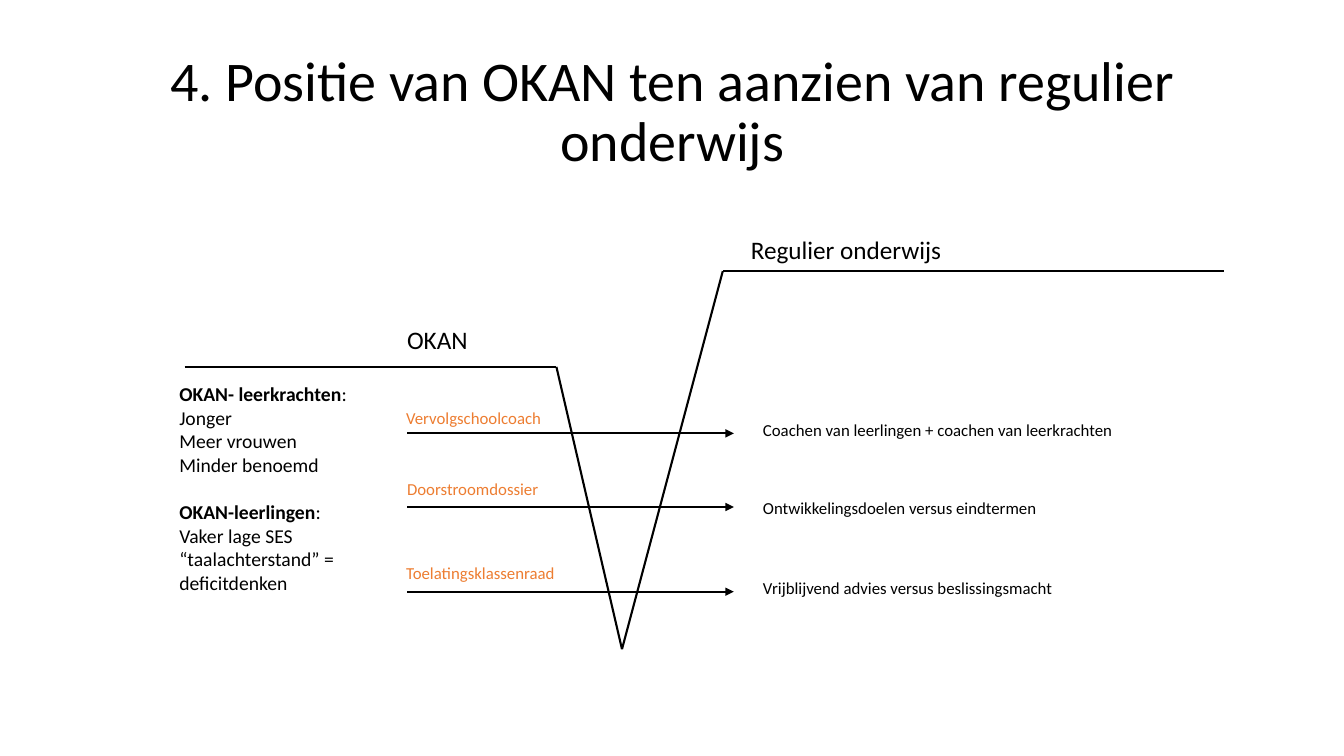
import pptx
import pptx.util
import pptx.dml.color
import pptx.enum.text
import pptx.enum.shapes
import pptx.oxml.ns
import lxml.etree

Pt = pptx.util.Pt
BLACK = pptx.dml.color.RGBColor(0, 0, 0)
ORANGE = pptx.dml.color.RGBColor(0xED, 0x7D, 0x31)

deck = pptx.Presentation()
deck.slide_width = pptx.util.Inches(13.33)
deck.slide_height = pptx.util.Inches(7.5)
col = deck.slide_width / 100
row = deck.slide_height / 100
slide = deck.slides.add_slide(deck.slide_layouts[6])


def write(left, top, wide, high, paras, size, color=BLACK):
    box = slide.shapes.add_textbox(
        round(left * col), round(top * row), round(wide * col), round(high * row))
    frame = box.text_frame
    frame.word_wrap = True
    for nr, runs in enumerate(paras):
        para = frame.add_paragraph() if nr else frame.paragraphs[0]
        for text, bold in runs:
            run = para.add_run()
            run.text = text
            run.font.name = "Calibri"
            run.font.size = Pt(size)
            run.font.bold = bold
            run.font.color.rgb = color
    return frame


def draw(start, end, arrow=False):
    line = slide.shapes.add_connector(
        pptx.enum.shapes.MSO_CONNECTOR.STRAIGHT,
        round(start[0] * col), round(start[1] * row),
        round(end[0] * col), round(end[1] * row))
    line.line.color.rgb = BLACK
    line.line.width = Pt(1.5)
    props = line._element.spPr
    if arrow:
        lxml.etree.SubElement(
            props.get_or_add_ln(), pptx.oxml.ns.qn("a:tailEnd"), type="triangle")
    lxml.etree.SubElement(props, pptx.oxml.ns.qn("a:effectLst"))


title = write(6.9, 5.33, 86.25, 19.33,
              [[("4. Positie van OKAN ten aanzien van regulier onderwijs", False)]], 40)
title.vertical_anchor = pptx.enum.text.MSO_ANCHOR.MIDDLE
title.paragraphs[0].alignment = pptx.enum.text.PP_ALIGN.CENTER
title.paragraphs[0].line_spacing = 0.9

cliff = [(13.73, 48.53), (41.4, 48.53), (46.28, 85.87), (53.78, 35.87), (91.05, 35.87)]
for start, end in zip(cliff, cliff[1:]):
    draw(start, end)

write(29.55, 42.27, 10.5, 5.33, [[("OKAN", False)]], 18)
write(55.13, 30.4, 17.03, 5.33, [[("Regulier onderwijs", False)]], 18)

groups = [
    ("OKAN- leerkrachten", ["Jonger", "Meer vrouwen", "Minder benoemd"]),
    ("OKAN-leerlingen", ["Vaker lage SES", "“taalachterstand” =", "deficitdenken"]),
]
paras = []
for head, items in groups:
    paras.append([(head, True), (":", False)])
    paras += [[(item, False)] for item in items]
traits = write(12.6, 49.87, 18.38, 32.8, paras, 14)
traits.paragraphs[4].space_before = Pt(17)

bridges = [
    (57.33, 29.48, 53.33, "Vervolgschoolcoach",
     54.93, "Coachen van leerlingen + coachen van leerkrachten"),
    (67.07, 29.55, 62.67, "Doorstroomdossier",
     65.2, "Ontwikkelingsdoelen versus eindtermen"),
    (78.27, 29.48, 73.73, "Toelatingsklassenraad",
     75.73, "Vrijblijvend advies versus beslissingsmacht"),
]
for level, left, top, label, side, result in bridges:
    draw((30.3, level), (54.6, level), arrow=True)
    write(left, top, 17.7, 4, [[(label, False)]], 12, ORANGE)
    write(56.03, side, 32.78, 4, [[(result, False)]], 12)

deck.save("out.pptx")
